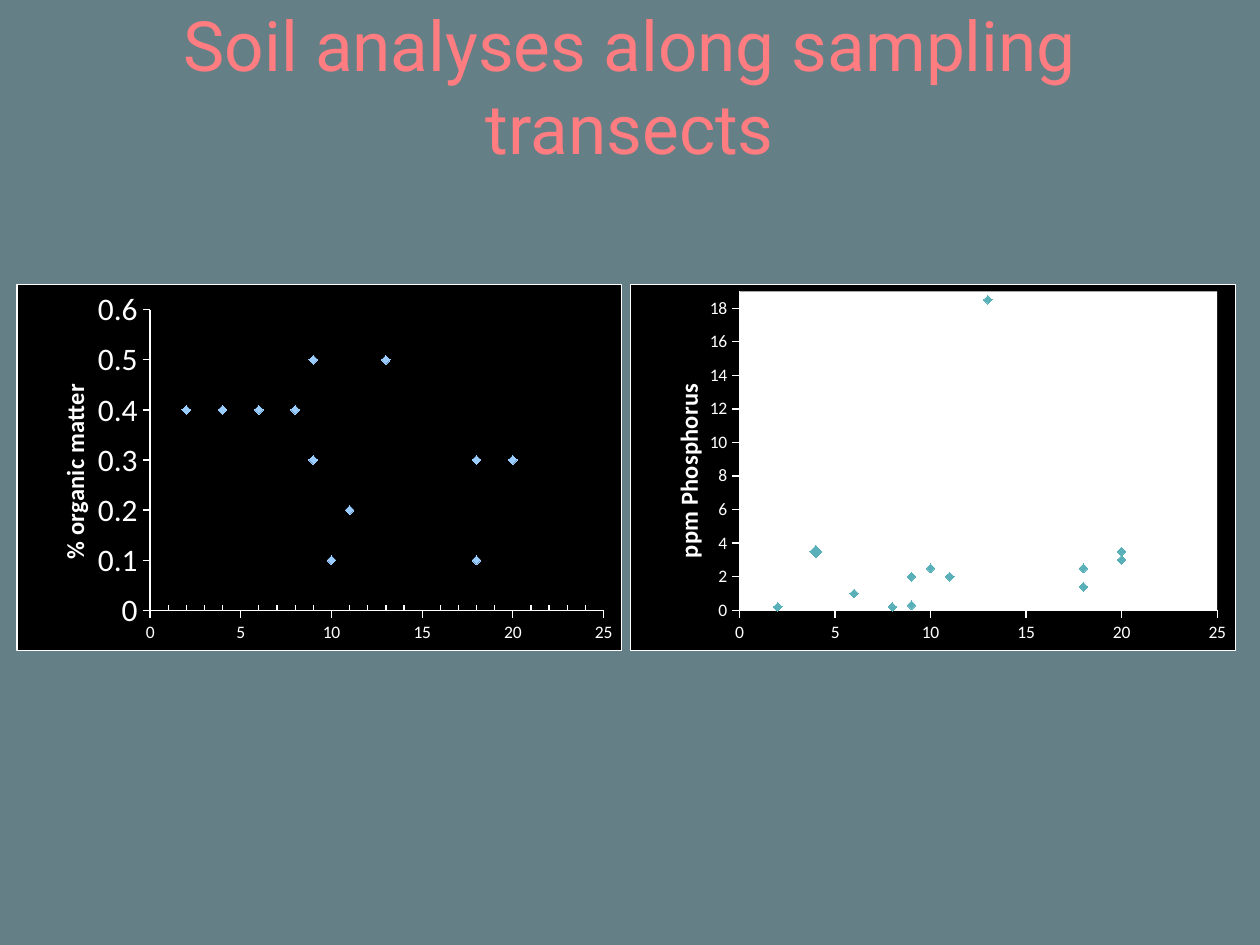
from lxml import etree
from pptx import Presentation
from pptx.chart.data import XyChartData
from pptx.dml.color import RGBColor
from pptx.enum.chart import XL_CHART_TYPE, XL_MARKER_STYLE, XL_TICK_MARK
from pptx.enum.text import MSO_ANCHOR, PP_ALIGN
from pptx.oxml import parse_xml
from pptx.oxml.ns import nsdecls, qn
from pptx.util import Inches, Pt

SCATTER = XL_CHART_TYPE.XY_SCATTER
DIAMOND = XL_MARKER_STYLE.DIAMOND
INSIDE, OUTSIDE, NO_TICK = XL_TICK_MARK.INSIDE, XL_TICK_MARK.OUTSIDE, XL_TICK_MARK.NONE
CENTER, MIDDLE = PP_ALIGN.CENTER, MSO_ANCHOR.MIDDLE

SLATE = RGBColor(0x64, 0x80, 0x86)
CORAL = RGBColor(0xFF, 0x7C, 0x80)
WHITE = RGBColor(0xFF, 0xFF, 0xFF)
BLACK = RGBColor(0x00, 0x00, 0x00)
SKY = RGBColor(0x99, 0xCC, 0xFF)
TEAL = RGBColor(0x59, 0xB0, 0xB9)

CHART_LEFT, CHART_STEP, CHART_TOP = 0.13, 4.87, 2.25
CHART_WIDTH, CHART_HEIGHT = 4.81, 2.92
TITLE_PLACE = (0.06, 0.26)

DISTANCE = [4, 6, 8, 9, 9, 10, 11, 13, 18, 18, 20, 20, 2]
PHOSPHORUS = [3.5, 1, 0.2, 2, 0.3, 2.5, 2, 18.5, 2.5, 1.4, 3.5, 3, 0.2]
MATTER_DISTANCE = [2, 4, 6, 8, 9, 9, 10, 11, 13, 18, 18, 20, 20]
MATTER = [0.4, 0.4, 0.4, 0.4, 0.3, 0.5, 0.1, 0.2, 0.5, 0.3, 0.1, 0.3, 0.3]


def style_font(font, name, size, color, bold=False):
    font.name, font.size, font.bold = name, Pt(size), bold
    font.color.rgb = color


def add_text(page, text, place, *, font, size, color, bottom_inset):
    box = page.shapes.add_textbox(*(Inches(length) for length in place))
    frame = box.text_frame
    frame.word_wrap = True
    frame.vertical_anchor = MIDDLE
    frame.margin_bottom = Inches(bottom_inset)
    para = frame.paragraphs[0]
    para.alignment = CENTER
    span = para.add_run()
    span.text = text
    style_font(span.font, font, size, color)


def set_layout(parent, index, shares, inner=False):
    """Place a chart part by its shares (x, y and perhaps w, h) of the chart."""
    for old in parent.findall(qn("c:layout")):
        parent.remove(old)
    layout = parse_xml(f"<c:layout {nsdecls('c')}><c:manualLayout/></c:layout>")
    settings = [("layoutTarget", "inner")] if inner else []
    settings += [("xMode", "edge"), ("yMode", "edge")]
    settings += zip("xywh", shares)
    for tag, value in settings:
        etree.SubElement(layout[0], qn(f"c:{tag}")).set("val", str(value))
    parent.insert(index, layout)


def area_style(fill, line=None):
    """Shape properties of a chart area; no colour means none drawn."""
    def paint(color):
        if color is None:
            return "<a:noFill/>"
        return f'<a:solidFill><a:srgbClr val="{color}"/></a:solidFill>'
    return parse_xml(f"<c:spPr {nsdecls('c', 'a')}>{paint(fill)}"
                     f'<a:ln w="{Pt(0.75)}">{paint(line)}</a:ln></c:spPr>')


def style_axis(axis, top, step, size):
    axis.minimum_scale, axis.maximum_scale, axis.major_unit = 0, top, step
    axis.has_major_gridlines = axis.has_minor_gridlines = False
    axis.major_tick_mark, axis.minor_tick_mark = OUTSIDE, NO_TICK
    axis.format.line.color.rgb = WHITE
    axis.format.line.width = Pt(0.75)
    labels = axis.tick_labels
    labels.number_format, labels.number_format_is_linked = "General", False
    style_font(labels.font, "Calibri", size, WHITE)


def style_marker(marker, size, color):
    marker.style, marker.size = DIAMOND, size
    marker.format.fill.solid()
    marker.format.fill.fore_color.rgb = color
    marker.format.line.color.rgb = color


def add_scatter(page, column, xs, ys, title, *, top, step, size, color,
                plot_shares, plot_fill=None):
    data = XyChartData()
    points = data.add_series("Series 1")
    for x, y in zip(xs, ys):
        points.add_data_point(x, y)
    chart = page.shapes.add_chart(
        SCATTER, Inches(CHART_LEFT + column * CHART_STEP), Inches(CHART_TOP),
        Inches(CHART_WIDTH), Inches(CHART_HEIGHT), data).chart
    chart.has_title = chart.has_legend = False
    style_font(chart.font, "Calibri", size, WHITE)

    style_axis(chart.category_axis, 25, 5, 10)
    style_axis(chart.value_axis, top, step, size)
    heading = chart.value_axis.axis_title
    heading.text_frame.text = title
    span = heading.text_frame.paragraphs[0].runs[0]
    style_font(span.font, "Calibri", 14, WHITE, bold=True)
    set_layout(heading._element, 1, TITLE_PLACE)

    chart.plots[0].vary_by_categories = False
    series = chart.plots[0].series[0]
    series.format.line.fill.background()
    style_marker(series.marker, 5, color)

    space = chart._chartSpace
    space.chart.addnext(area_style(BLACK, WHITE))
    plot_area = space.chart.plotArea
    set_layout(plot_area, 0, plot_shares, inner=True)
    plot_area.append(area_style(plot_fill))
    return chart


def main():
    deck = Presentation()
    deck.slide_width, deck.slide_height = Inches(10), Inches(7.5)
    page = deck.slides.add_slide(deck.slide_layouts[6])
    page.background.fill.solid()
    page.background.fill.fore_color.rgb = SLATE

    add_text(page, "Soil analyses along sampling transects", (0.5, 0.3, 9, 1.25),
             font="Roboto", size=39.6, color=CORAL, bottom_inset=0.54)

    phosphorus = add_scatter(
        page, 1, DISTANCE, PHOSPHORUS, "ppm Phosphorus", top=19, step=2, size=10,
        color=TEAL, plot_shares=(0.18, 0.02, 0.79, 0.87), plot_fill=WHITE)
    first_point = phosphorus.plots[0].series[0].points[0]
    style_marker(first_point.marker, 7, TEAL)

    matter = add_scatter(
        page, 0, MATTER_DISTANCE, MATTER, "% organic matter", top=0.6, step=0.1,
        size=18, color=SKY, plot_shares=(0.22, 0.07, 0.75, 0.82))
    matter.category_axis.minor_unit = 1
    matter.category_axis.minor_tick_mark = INSIDE

    deck.save("out.pptx")


if __name__ == "__main__":
    main()
